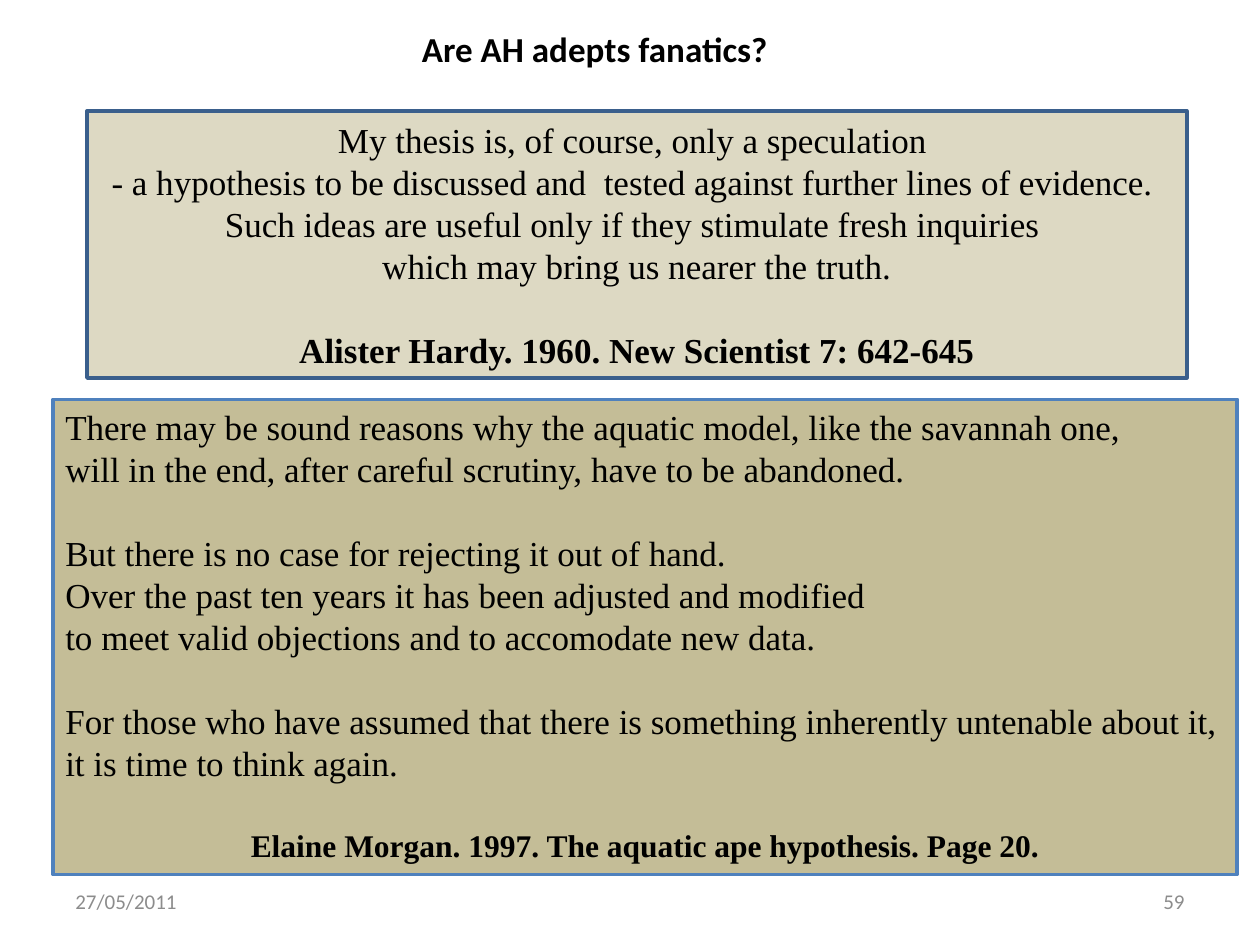
import pptx
import pptx.dml.color
import pptx.enum.shapes
import pptx.enum.text
import pptx.util

Inches = pptx.util.Inches
Pt = pptx.util.Pt
ALIGN = pptx.enum.text.PP_ALIGN
ANCHOR = pptx.enum.text.MSO_ANCHOR

COLORS = {
    "text": "000000",
    "footer": "8C8C8C",
    "hardy_fill": "DDD9C3",
    "hardy_line": "3A5F8C",
    "morgan_fill": "C4BD97",
    "morgan_line": "4F81BD",
}
SERIF = "Times New Roman"
SANS = "Calibri"
LINE_GAP = 24

HARDY_QUOTE = [
    "My thesis is, of course, only a speculation ",
    "- a hypothesis to be discussed and  tested against further lines of evidence. ",
    "Such ideas are useful only if they stimulate fresh inquiries ",
    "which may bring us nearer the truth.",
]
MORGAN_QUOTE = [
    ["There may be sound reasons why the aquatic model, like the savannah one,",
     "will in the end, after careful scrutiny, have to be abandoned."],
    ["But there is no case for rejecting it out of hand.",
     "Over the past ten years it has been adjusted and modified",
     "to meet valid objections and to accomodate new data."],
    ["For those who have assumed that there is something inherently untenable about it,",
     "it is time to think again."],
]


def rgb(name):
    return pptx.dml.color.RGBColor.from_string(COLORS[name])


def add_text(box, text, font=SERIF, size=20, bold=False, color="text",
             align=ALIGN.LEFT, before=0):
    """Fill the empty first paragraph of the box, or add another one."""
    frame = box.text_frame
    para = frame.add_paragraph() if frame.text else frame.paragraphs[0]
    para.alignment = align
    para.space_before = Pt(before)
    span = para.add_run()
    span.text = text
    span.font.name = font
    span.font.size = Pt(size)
    span.font.bold = bold
    span.font.color.rgb = rgb(color)


def add_label(page, left, top, width, height, text, wrap=True,
              anchor=ANCHOR.MIDDLE, **style):
    box = page.shapes.add_textbox(Inches(left), Inches(top), Inches(width), Inches(height))
    box.text_frame.word_wrap = wrap
    box.text_frame.vertical_anchor = anchor
    add_text(box, text, font=SANS, **style)


def add_panel(page, left, top, width, height, name, anchor):
    panel = page.shapes.add_shape(
        pptx.enum.shapes.MSO_SHAPE.RECTANGLE,
        Inches(left), Inches(top), Inches(width), Inches(height))
    panel.shadow.inherit = False
    panel.fill.solid()
    panel.fill.fore_color.rgb = rgb(name + "_fill")
    panel.line.color.rgb = rgb(name + "_line")
    panel.line.width = Pt(2)
    panel.text_frame.word_wrap = False
    panel.text_frame.vertical_anchor = anchor
    return panel


def add_hardy(page, left, top, width, height):
    panel = add_panel(page, left, top, width, height, "hardy", ANCHOR.MIDDLE)
    for line in HARDY_QUOTE:
        add_text(panel, line, align=ALIGN.CENTER)
    add_text(panel, "Alister Hardy. 1960. New Scientist 7: 642-645",
             bold=True, align=ALIGN.CENTER, before=LINE_GAP)


def add_morgan(page, left, top, width, height):
    panel = add_panel(page, left, top, width, height, "morgan", ANCHOR.TOP)
    for group, lines in enumerate(MORGAN_QUOTE):
        for row, line in enumerate(lines):
            add_text(panel, line, before=LINE_GAP if group and row == 0 else 0)
    add_text(panel, "Elaine Morgan. 1997. The aquatic ape hypothesis. Page 20.",
             size=18, bold=True, align=ALIGN.CENTER, before=LINE_GAP)


def add_footer(page, left, top, width, height):
    label_width = 2.33
    style = {"size": 12, "color": "footer"}
    add_label(page, left, top, label_width, height, "27/05/2011", **style)
    add_label(page, left + width - label_width, top, label_width, height, "59",
              align=ALIGN.RIGHT, **style)


def main():
    deck = pptx.Presentation()
    deck.slide_width = Inches(10)
    deck.slide_height = Inches(7.5)
    page = deck.slides.add_slide(deck.slide_layouts[6])
    add_hardy(page, 0.69, 0.88, 8.73, 2.12)
    add_morgan(page, 0.42, 3.17, 9.4, 3.77)
    add_label(page, 3.25, 0.17, 2.97, 0.44, "Are AH adepts fanatics?",
              wrap=False, anchor=ANCHOR.TOP, bold=True)
    add_footer(page, 0.5, 6.95, 9, 0.4)
    deck.save("out.pptx")


if __name__ == "__main__":
    main()
